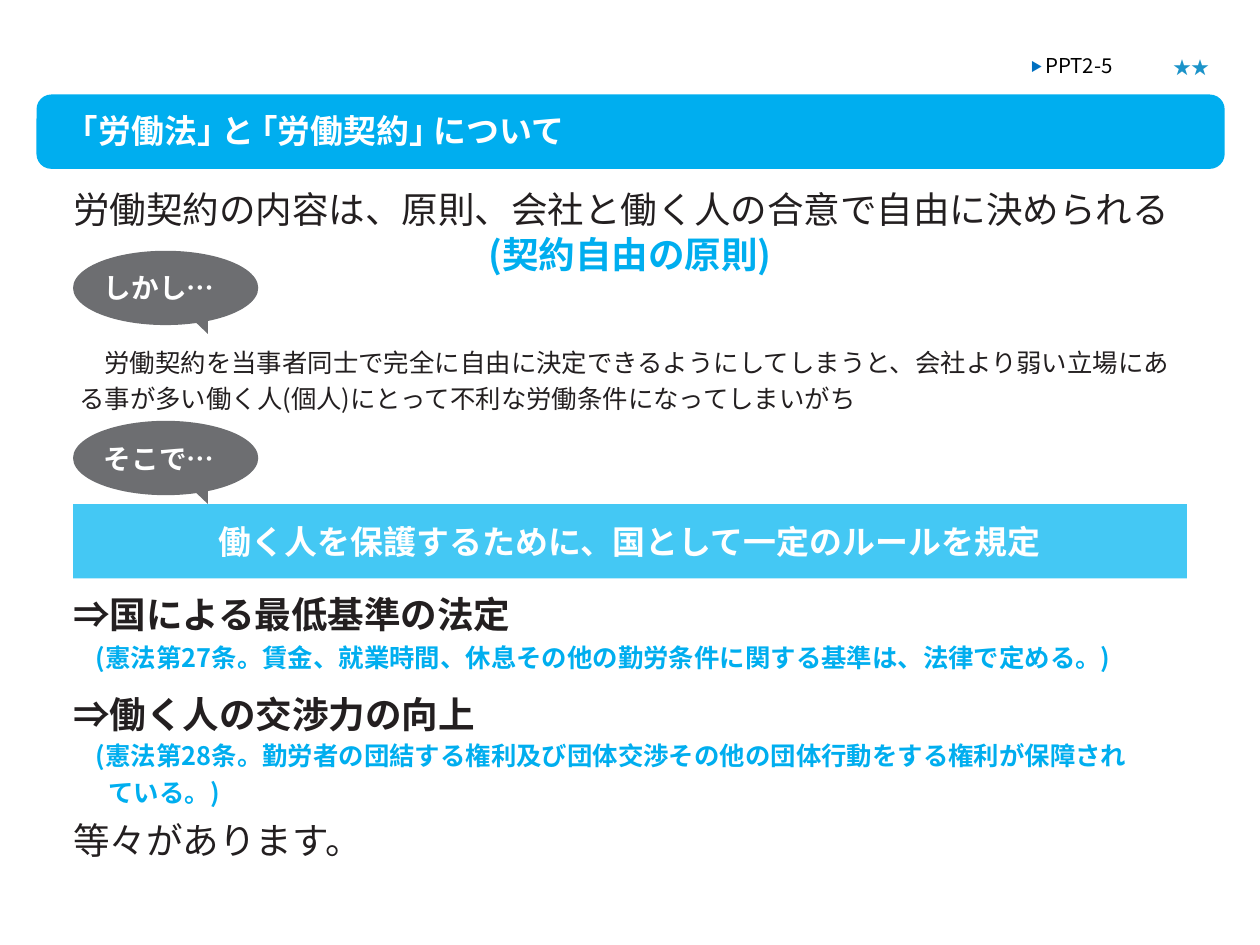
from lxml import etree
from pptx import Presentation
from pptx.dml.color import RGBColor
from pptx.enum.shapes import MSO_SHAPE
from pptx.enum.text import MSO_ANCHOR, MSO_AUTO_SIZE, PP_ALIGN
from pptx.oxml.ns import qn
from pptx.util import Inches, Pt

RECT, ROUNDED, OVAL = MSO_SHAPE.RECTANGLE, MSO_SHAPE.ROUNDED_RECTANGLE, MSO_SHAPE.OVAL
LEFT, CENTER = PP_ALIGN.LEFT, PP_ALIGN.CENTER
TOP, MIDDLE = MSO_ANCHOR.TOP, MSO_ANCHOR.MIDDLE

FONT = "Noto Sans CJK JP"
WHITE = RGBColor(0xFF, 0xFF, 0xFF)
BLACK = RGBColor(0x00, 0x00, 0x00)
INK = RGBColor(0x23, 0x1F, 0x20)
CYAN = RGBColor(0x00, 0xAE, 0xEF)
LIGHT_CYAN = RGBColor(0x44, 0xC8, 0xF4)
GRAY = RGBColor(0x6D, 0x6E, 0x71)
MARKER_BLUE = RGBColor(0x00, 0x70, 0xC0)
STAR_BLUE = RGBColor(0x1B, 0x93, 0xC9)

BODY = {"size": 20.9, "color": INK}
HEADING = {**BODY, "bold": True}
SMALL = {"size": 14.5, "color": INK}
ARTICLE = {"size": 14.5, "color": CYAN, "bold": True}
BANNER = {"size": 18.8, "color": WHITE, "bold": True}
BUBBLE = {"size": 15.8, "color": WHITE, "bold": True}


class SlideBuilder:
    def __init__(self, slide, font):
        self.s = slide
        self.font = font

    def run(self, p, text, size, color, bold=False, baseline=0):
        r = p.add_run()
        r.text = text
        for name, value in {"name": self.font, "size": Pt(size), "bold": bold}.items():
            setattr(r.font, name, value)
        r.font.color.rgb = color
        rPr = r.font._element
        etree.SubElement(rPr, qn("a:ea"), typeface=self.font)
        if baseline:
            rPr.set("baseline", str(baseline))

    def fill_text(self, sp, paragraphs, top=0, left=0, anchor=TOP):
        """Each paragraph is (runs, format); a run is (text, style)."""
        tf = sp.text_frame
        frame = {"word_wrap": True, "auto_size": MSO_AUTO_SIZE.NONE,
                 "vertical_anchor": anchor, "margin_left": Inches(left),
                 "margin_top": Inches(top), "margin_right": 0, "margin_bottom": 0}
        for name, value in frame.items():
            setattr(tf, name, value)
        for i, (runs, layout) in enumerate(paragraphs):
            p = tf.add_paragraph() if i else tf.paragraphs[0]
            p.alignment = layout.get("align", LEFT)
            p.space_before = Pt(layout.get("before", 0))
            p.line_spacing = layout.get("line", 1.0)
            pPr = p._p.get_or_add_pPr()
            pPr.set("marL", str(Inches(layout.get("margin", 0))))
            pPr.set("indent", str(Inches(layout.get("indent", 0))))
            etree.SubElement(pPr, qn("a:buNone"))
            for text, style in runs:
                self.run(p, text, **style)

    def paint(self, sp, color):
        sp.shadow.inherit = False
        sp.fill.solid()
        sp.fill.fore_color.rgb = color
        sp.line.fill.background()
        return sp

    def shape(self, kind, box, color):
        return self.paint(self.s.shapes.add_shape(kind, *map(Inches, box)), color)

    def text(self, box, paragraphs, top=0):
        self.fill_text(self.s.shapes.add_textbox(*map(Inches, box)), paragraphs, top)

    def placeholder(self, sp, box, paragraphs, top):
        sp.left, sp.top, sp.width, sp.height = map(Inches, box)
        self.fill_text(sp, paragraphs, top)

    def bubble(self, y, text):
        oval = self.shape(OVAL, (0.58, y, 1.47, 0.59), GRAY)
        self.fill_text(oval, [([(text, BUBBLE)], {})], left=0.03, anchor=MIDDLE)
        tail = self.s.shapes.build_freeform(Inches(1.65), Inches(y + 0.4))
        tail.add_line_segments([(Inches(1.45), Inches(y + 0.47)),
                                (Inches(1.65), Inches(y + 0.66))])
        self.paint(tail.convert_to_shape(), GRAY)


def main():
    prs = Presentation()
    prs.slide_width, prs.slide_height = Inches(10), Inches(7.5)
    s = prs.slides.add_slide(prs.slide_layouts[1])
    b = SlideBuilder(s, FONT)
    title, body = s.placeholders

    banner = b.shape(ROUNDED, (0.29, 0.75, 9.43, 0.59), CYAN)
    banner.adjustments[0] = 0.2
    title._element.addprevious(banner._element)
    b.placeholder(title, (0.64, 0.86, 4.89, 0.33), [
        ([("｢労働法｣ と ｢労働契約｣ について", BANNER)], {"margin": 0.01, "before": 1.1}),
    ], top=0.02)

    b.text((8.17, 0.41, 0.99, 0.21), [
        ([("▶ ", {"size": 11.7, "color": MARKER_BLUE, "baseline": 9000}),
          ("PPT2-5", {"size": 11.7, "color": BLACK})], {"margin": 0.01, "before": 1}),
    ], top=0.01)
    b.text((9.31, 0.4, 0.39, 0.27),
           [([("★★", {"size": 10.3, "color": STAR_BLUE})], {})], top=0.05)

    b.text((0.57, 1.42, 8.86, 0.79), [
        ([("労働契約の内容は、原則、会社と働く人の合意で自由に決められる", BODY)],
         {"margin": 0.01, "before": 4.3}),
        ([("(契約自由の原則)", {**HEADING, "color": CYAN})],
         {"align": CENTER, "before": 3.5, "line": Pt(22.6)}),
    ], top=0.06)
    b.bubble(1.99, "しかし…")
    b.text((0.57, 2.66, 8.86, 0.59), [
        ([("労働契約を当事者同士で完全に自由に決定できるようにしてしまうと、"
           "会社より弱い立場にある事が多い働く人(個人)にとって"
           "不利な労働条件になってしまいがち", SMALL)],
         {"margin": 0.06, "indent": 0.2, "before": 15.7, "line": 1.16}),
    ], top=0.06)
    b.bubble(3.34, "そこで…")

    rule = b.shape(RECT, (0.58, 4, 8.84, 0.59), LIGHT_CYAN)
    b.fill_text(rule, [
        ([("働く人を保護するために、国として一定のルールを規定", BANNER)], {"align": CENTER}),
    ], anchor=MIDDLE)

    b.placeholder(body, (0.57, 4.63, 8.97, 2.23), [
        ([("⇒国による最低基準の法定", HEADING)], {"margin": 0.01, "before": 5.4}),
        ([("(憲法第27条。賃金、就業時間、休息その他の勤労条件に関する基準は、"
           "法律で定める。)", ARTICLE)], {"margin": 0.19, "before": 3.3}),
        ([("⇒働く人の交渉力の向上", HEADING)], {"margin": 0.01, "before": 11.2}),
        ([("(憲法第28条。勤労者の団結する権利及び団体交渉その他の団体行動をする"
           "権利が保障され", ARTICLE)], {"margin": 0.19, "before": 2.3}),
        ([("ている。)", ARTICLE)], {"margin": 0.29, "before": 3.8}),
        ([("等々があります。", BODY)], {"margin": 0.01, "before": 5.9}),
    ], top=0.07)

    prs.save("out.pptx")


if __name__ == "__main__":
    main()
